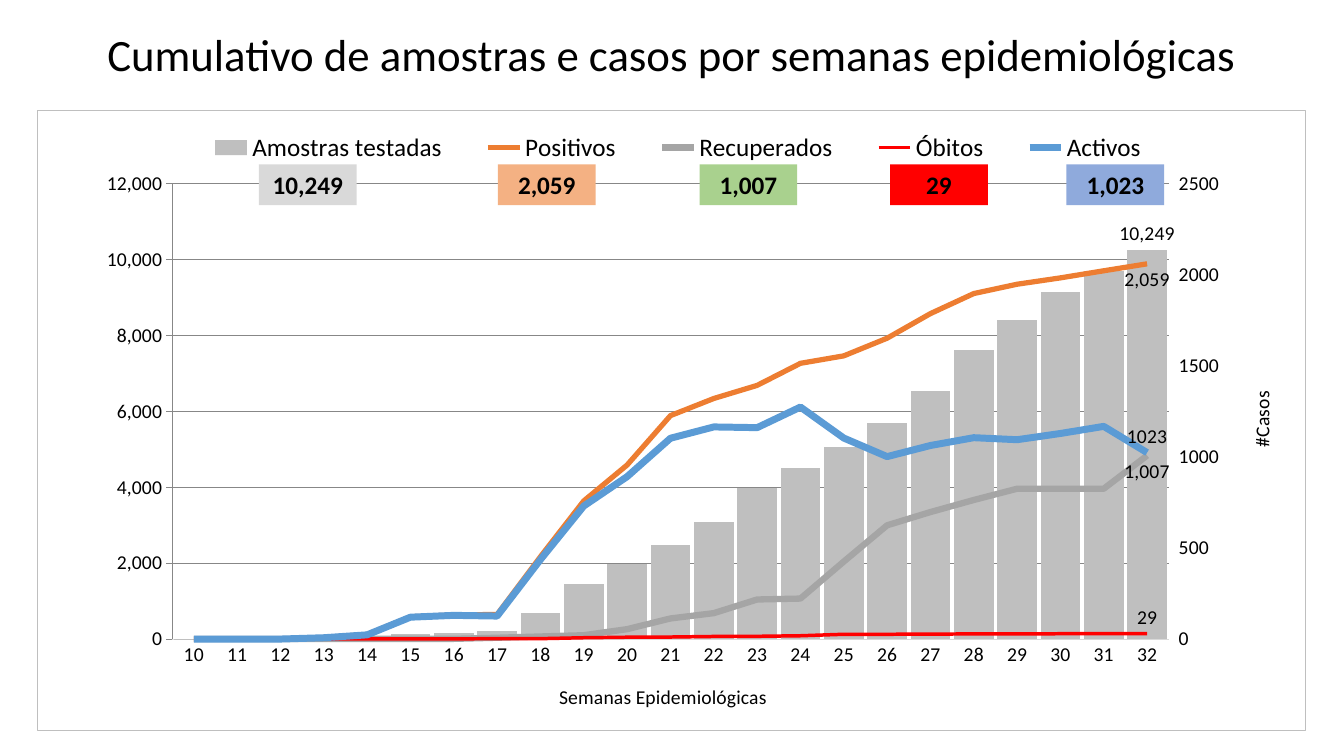
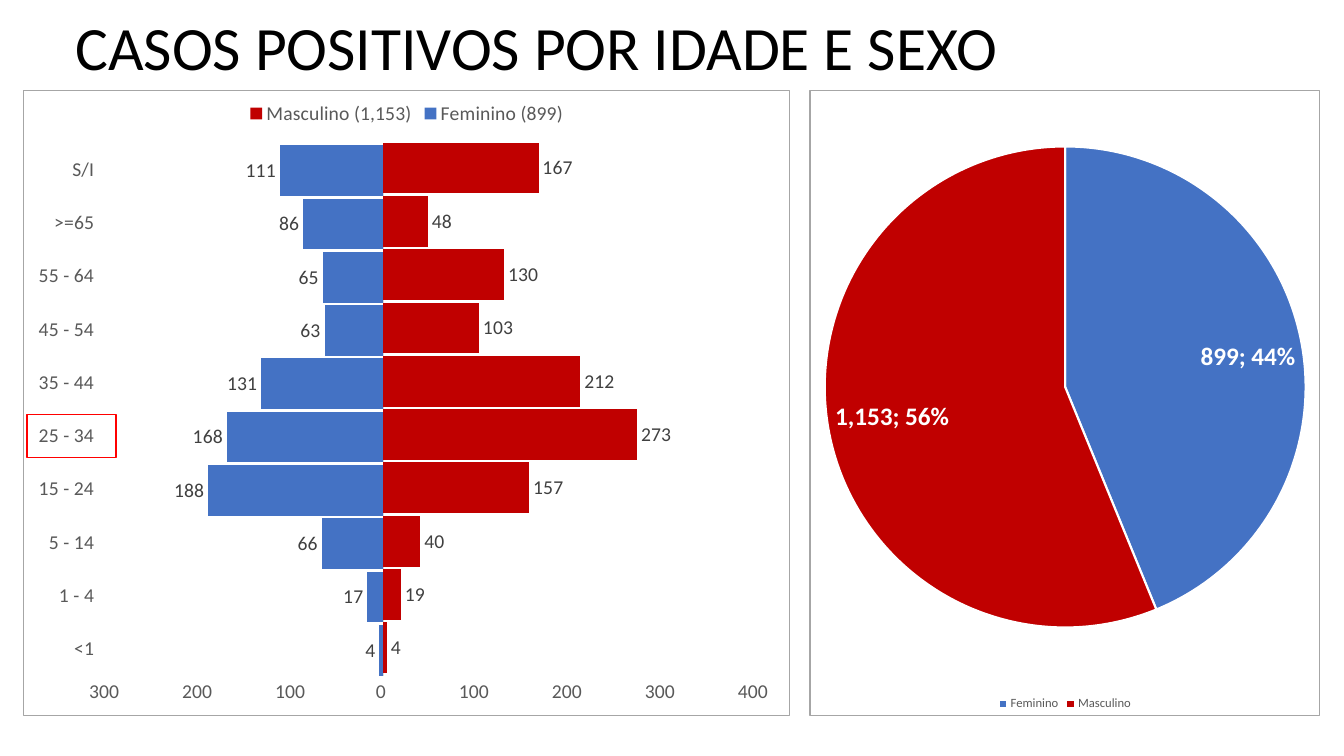
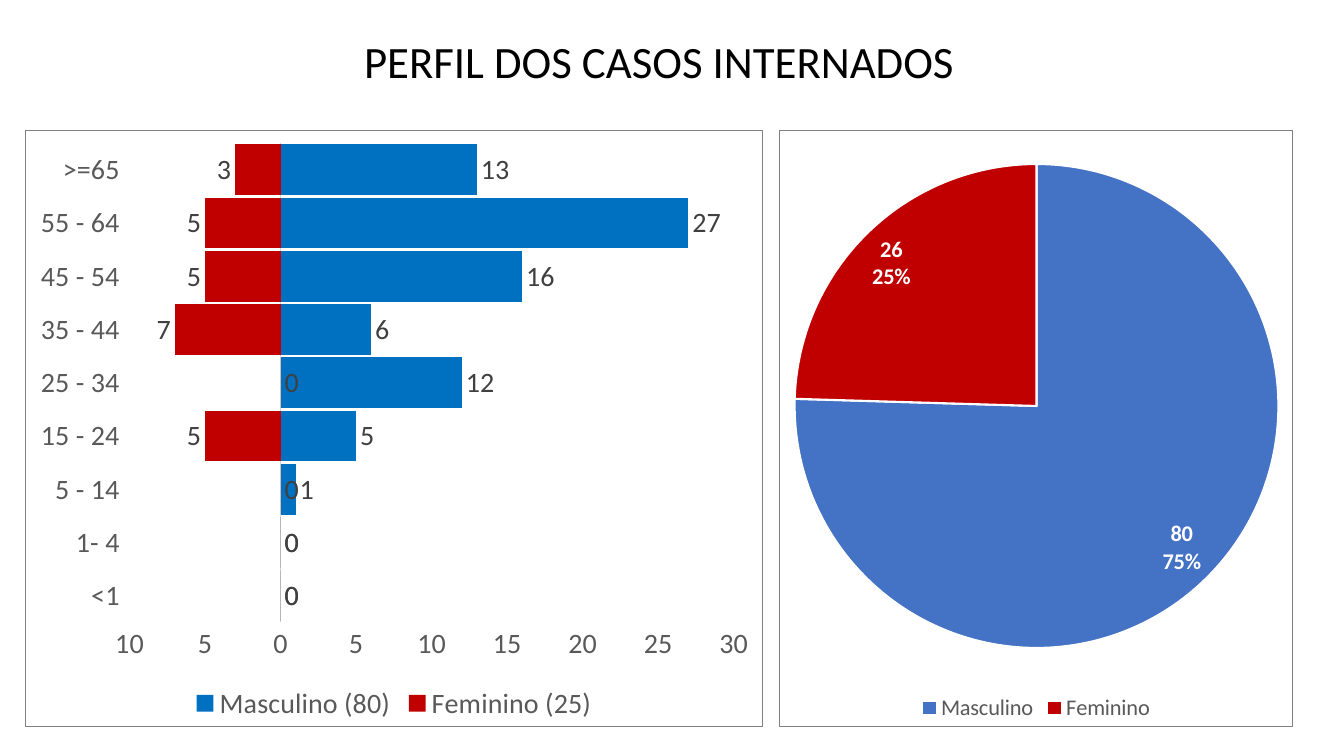
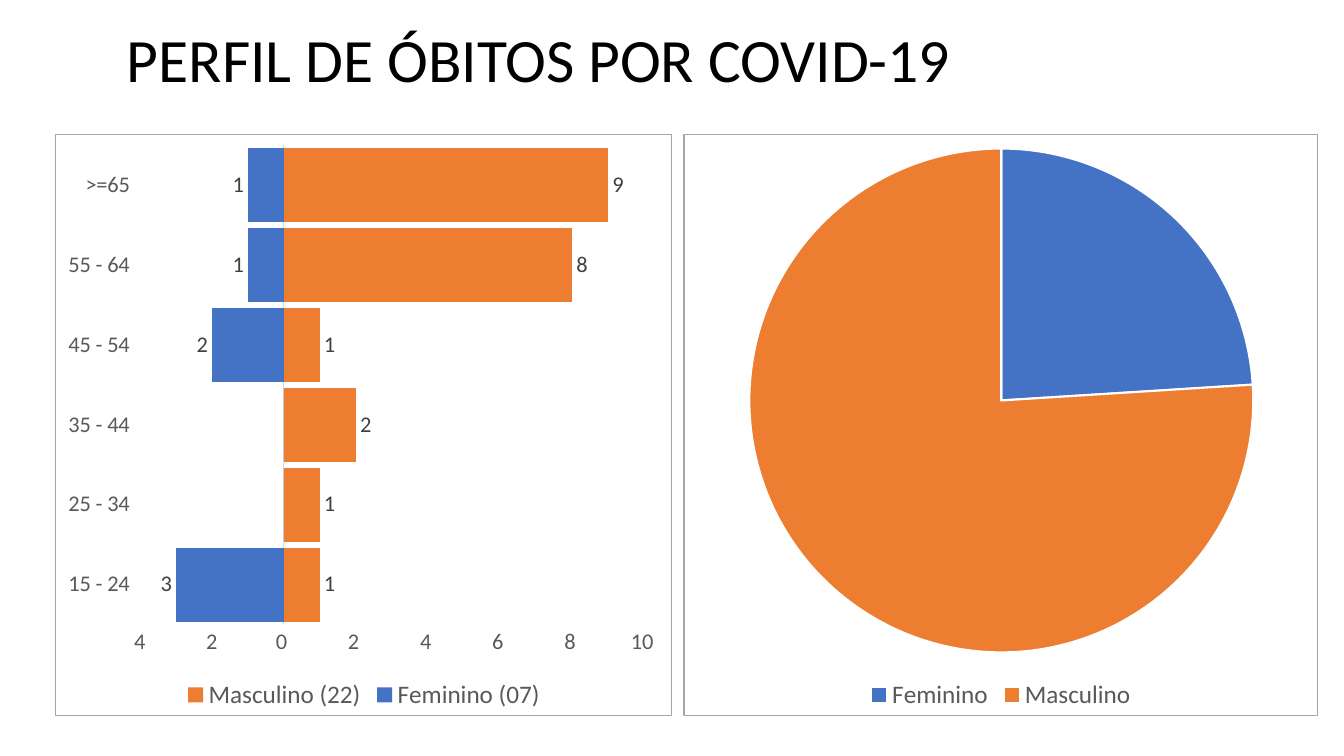
from copy import deepcopy

from pptx import Presentation
from pptx.chart.axis import ValueAxis
from pptx.chart.data import CategoryChartData
from pptx.dml.color import RGBColor
from pptx.enum.chart import (XL_CHART_TYPE, XL_LABEL_POSITION, XL_LEGEND_POSITION,
                             XL_MARKER_STYLE, XL_TICK_LABEL_POSITION, XL_TICK_MARK)
from pptx.enum.shapes import MSO_SHAPE
from pptx.enum.text import MSO_ANCHOR, PP_ALIGN
from pptx.oxml import parse_xml
from pptx.oxml.ns import nsdecls, qn
from pptx.util import Pt

FACE = "Calibri"
COLORS = {
    "black": "000000", "white": "FFFFFF", "text": "595959", "label": "404040",
    "axis": "D9D9D9", "silver": "BFBFBF", "frame": "A6A6A6", "dim": "808080",
    "gray": "A5A5A5", "orange": "ED7D31", "red": "FF0000", "sky": "5B9BD5",
    "blue": "4472C4", "azure": "0070C0", "crimson": "C00000",
    "peach": "F4B183", "green": "A9D18E", "pale": "8FAADC",
}
TOP, BOTTOM = XL_LEGEND_POSITION.TOP, XL_LEGEND_POSITION.BOTTOM
ABOVE, BELOW = XL_LABEL_POSITION.ABOVE, XL_LABEL_POSITION.BELOW
END = XL_LABEL_POSITION.OUTSIDE_END


def color(name):
    return RGBColor.from_string(COLORS[name])


def layout(spot, inner=False):
    """Manual chart layout; spot is left, top, width, height in percent."""
    parts = '<c:layoutTarget val="inner"/>' if inner else ""
    parts += '<c:xMode val="edge"/><c:yMode val="edge"/>'
    for tag, part in zip("xywh", spot):
        parts += f'<c:{tag} val="{part / 100:.3f}"/>'
    return parse_xml(f'<c:layout {nsdecls("c")}><c:manualLayout>{parts}'
                     '</c:manualLayout></c:layout>')


class Deck:
    def __init__(self):
        self.show = Presentation()
        self.show.slide_width, self.show.slide_height = Pt(960), Pt(540)
        self.page = None

    def slide(self, title, box, size, align=PP_ALIGN.LEFT):
        self.page = self.show.slides.add_slide(self.show.slide_layouts[6])
        frame = self.page.shapes.add_textbox(*map(Pt, box)).text_frame
        frame.word_wrap = True
        frame.vertical_anchor = MSO_ANCHOR.MIDDLE
        para = frame.paragraphs[0]
        para.text, para.alignment, para.line_spacing = title, align, 0.9
        self.font(para.font, size)

    def font(self, font, size, tint="black", bold=False):
        font.name, font.size, font.bold = FACE, Pt(size), bold
        font.color.rgb = color(tint)

    def rect(self, box, fill=None, line=None, text=""):
        shape = self.page.shapes.add_shape(MSO_SHAPE.RECTANGLE, *map(Pt, box))
        shape.shadow.inherit = False
        if fill:
            shape.fill.solid()
            shape.fill.fore_color.rgb = color(fill)
        else:
            shape.fill.background()
        if line:
            self.line(shape.line, line, 1)
        else:
            shape.line.fill.background()
        if text:
            para = shape.text_frame.paragraphs[0]
            para.text, para.alignment = text, PP_ALIGN.CENTER
            self.font(para.font, 18, bold=True)

    def line(self, line, tint, width):
        line.color.rgb = color(tint)
        line.width = Pt(width)

    def paint(self, part, tint):
        part.format.fill.solid()
        part.format.fill.fore_color.rgb = color(tint)

    def chart(self, kind, box, spot, cats, rows, size, legend, edge):
        """Framed chart; rows hold name, values, format; legend holds place, size, tint."""
        data = CategoryChartData()
        data.categories = cats
        for name, vals, form in rows:
            data.add_series(name, vals, form)
        chart = self.page.shapes.add_chart(kind, *map(Pt, box), data).chart
        chart.has_title = False
        self.font(chart.font, size)
        chart.has_legend = True
        chart.legend.include_in_layout = False
        chart.legend.position = legend[0]
        self.font(chart.legend.font, *legend[1:])
        root = chart._chartSpace
        area = root.chart.plotArea
        for old in area.findall(qn("c:layout")):
            area.remove(old)
        area.insert(0, layout(spot, inner=True))
        root.chart.addnext(parse_xml(
            f'<c:spPr {nsdecls("c", "a")}><a:noFill/><a:ln w="9525"><a:solidFill>'
            f'<a:srgbClr val="{COLORS[edge]}"/></a:solidFill></a:ln></c:spPr>'))
        return chart

    def axis(self, axis, size, tint, span=None, form=None, title=None, tick=XL_TICK_MARK.NONE):
        """Style an axis; a span (low, high, step) marks a value axis."""
        axis.has_major_gridlines = False
        axis.major_tick_mark, axis.minor_tick_mark = tick, XL_TICK_MARK.NONE
        self.font(axis.tick_labels.font, size, tint)
        if span:
            axis.minimum_scale, axis.maximum_scale, axis.major_unit = span
            axis.tick_labels.number_format = form
            axis.tick_labels.number_format_is_linked = False
            axis.format.line.fill.background()
        else:
            self.line(axis.format.line, "axis", 0.75)
        if title:
            axis.has_title = True
            para = axis.axis_title.text_frame.paragraphs[0]
            para.text = title
            self.font(para.font, size, tint)
            if span:
                body = next(axis.axis_title._element.iter(qn("a:bodyPr")))
                body.set("rot", "-5400000")
                body.set("vert", "horz")

    def bars(self, box, spot, cats, rows, size, legend, edge, span, form, gap, lap=100):
        """Age pyramid; rows hold name, values, tint, label format."""
        chart = self.chart(XL_CHART_TYPE.BAR_CLUSTERED, box, spot, cats,
                           [(name, vals, "General") for name, vals, _, _ in rows],
                           size, legend, edge)
        plot = chart.plots[0]
        plot.gap_width, plot.overlap, plot.vary_by_categories = gap, lap, False
        self.axis(chart.category_axis, size, "text")
        chart.category_axis.tick_label_position = XL_TICK_LABEL_POSITION.LOW
        self.axis(chart.value_axis, size, "text", span, form)
        for bar, (_, _, tint, mask) in zip(plot.series, rows):
            self.paint(bar, tint)
            bar.invert_if_negative = False
            tags = bar.data_labels
            tags.show_value, tags.position = True, END
            tags.number_format, tags.number_format_is_linked = mask, False
            self.font(tags.font, size, "label")

    def pie(self, box, spot, slices, legend, edge, size=None, gap=None):
        """Pie of (name, value, tint); size and gap are those of its labels."""
        cats, vals, tints = zip(*slices)
        chart = self.chart(XL_CHART_TYPE.PIE, box, spot, cats,
                           [("Series 1", vals, "#,##0")], 10, legend, edge)
        plot = chart.plots[0]
        plot.vary_by_categories = True
        ring = plot.series[0]
        for num, tint in enumerate(tints):
            point = ring.points[num]
            self.paint(point, tint)
            self.line(point.format.line, "white", 1.5)
        if size:
            tags = ring.data_labels
            tags.show_value = tags.show_percentage = True
            tags.position = XL_LABEL_POSITION.INSIDE_END
            self.font(tags.font, size, "white", True)
            mark = parse_xml(f'<c:separator {nsdecls("c")}>{gap}</c:separator>')
            last = tags._element.find(qn("c:showBubbleSize"))
            if last is None:
                last = tags._element.find(qn("c:showPercent"))
            last.addnext(mark)

    def combo(self, box, spot, key, cats, bar, lines):
        """Columns with lines on a second axis; lines add tint, width, label place."""
        chart = self.chart(XL_CHART_TYPE.COLUMN_CLUSTERED, box, spot, cats,
                           [bar] + [row[:3] for row in lines],
                           14, (TOP, 18, "black"), "silver")
        chart.legend._element.find(qn("c:legendPos")).addnext(layout(key))
        right = self.split(chart)
        plot = chart.plots[0]
        plot.gap_width, plot.vary_by_categories = 9, False
        self.axis(chart.category_axis, 14, "black", title="Semanas Epidemiológicas")
        self.axis(chart.value_axis, 14, "black", (0, 12000, 2000), "General",
                  "#Amostras testadas")
        self.axis(right, 14, "black", (0, 2500, 500), "General", "#Casos",
                  XL_TICK_MARK.OUTSIDE)
        self.paint(plot.series[0], "silver")
        self.tag(plot.series[0], len(cats) - 1, END)
        for curve, (_, _, _, tint, width, place) in zip(chart.plots[1].series, lines):
            self.line(curve.format.line, tint, width)
            curve.marker.style = XL_MARKER_STYLE.NONE
            curve.smooth = False
            self.tag(curve, len(cats) - 1, place)

    def split(self, chart):
        """Move all but the first series to lines; return their value axis."""
        area = chart._chartSpace.chart.plotArea
        cols = area.find(qn("c:barChart"))
        lines = parse_xml(f'<c:lineChart {nsdecls("c")}><c:grouping val="standard"/>'
                          '<c:varyColors val="0"/><c:marker val="1"/>'
                          '<c:axId val="50"/><c:axId val="51"/></c:lineChart>')
        for ser in cols.findall(qn("c:ser"))[1:]:
            for flag in ser.findall(qn("c:invertIfNegative")):
                ser.remove(flag)
            lines.find(qn("c:marker")).addprevious(ser)
        cols.addnext(lines)
        cat, val = area.find(qn("c:catAx")), area.find(qn("c:valAx"))
        base, side = deepcopy(cat), deepcopy(val)
        val.addnext(side)
        side.addnext(base)
        for axis, own, other in ((base, "50", "51"), (side, "51", "50")):
            axis.find(qn("c:axId")).set("val", own)
            axis.find(qn("c:crossAx")).set("val", other)
        base.find(qn("c:delete")).set("val", "1")
        side.find(qn("c:axPos")).set("val", "r")
        side.find(qn("c:crosses")).set("val", "max")
        return ValueAxis(side)

    def tag(self, series, num, place):
        """Label one point of a series with its value."""
        series.data_labels.show_value = False
        label = series.points[num].data_label
        self.font(label.font, 14)
        label.position = place


def weeks(deck):
    deck.slide("Cumulativo de amostras e casos por semanas epidemiológicas",
               (26.6, 10, 906.5, 61), 32, PP_ALIGN.CENTER)
    tests = [1, 27, 0, 54, 92, 123, 152, 201, 696, 1442, 1985, 2473, 3077, 3983, 4508,
             5051, 5689, 6535, 7601, 8400, 9147, 9689, 10249]
    found = [0, 0, 0, 8, 25, 122, 132, 135, 452, 758, 955, 1226, 1320, 1392, 1513,
             1554, 1651, 1786, 1896, 1947, 1982, 2021, 2059]
    cured = [0, 0, 0, 1, 1, 1, 1, 7, 14, 21, 54, 113, 142, 217, 222,
             425, 624, 697, 763, 825, 825, 825, 1007]
    dead = [None, 0, 0, 0, 1, 1, 1, 2, 2, 7, 10, 11, 14, 15, 18,
            26, 26, 27, 28, 28, 29, 29, 29]
    live = [0, 0, 0, 7, 23, 120, 130, 126, 436, 730, 891, 1102, 1164, 1160, 1273,
            1103, 1001, 1062, 1105, 1094, 1128, 1167, 1023]
    deck.combo((26.6, 78.5, 906.5, 443.5), (10.6, 11.8, 78.6, 73.5), (11, 3, 79, 6),
               [str(week) for week in range(10, 33)],
               ("Amostras testadas", tests, "#,##0"),
               [("Positivos", found, "#,##0", "orange", 3.75, BELOW),
                ("Recuperados", cured, "#,##0", "gray", 4.5, BELOW),
                ("Óbitos", dead, "#,##0", "red", 2.5, ABOVE),
                ("Activos", live, "General", "sky", 5, ABOVE)])
    for left, fill, text in ((185, "axis", "10,249"), (355.7, "peach", "2,059"),
                             (499.7, "green", "1,007"), (635.8, "red", "29"),
                             (761.8, "pale", "1,023")):
        deck.rect((left, 117.5, 69.8, 29), fill, text=text)


def cases(deck):
    deck.slide("CASOS POSITIVOS POR IDADE E SEXO", (46.8, 8.6, 896.4, 55.4), 44)
    deck.bars((16.6, 64.1, 547.9, 447.1), (10.5, 8.4, 85, 85.3),
              ["<1", "1 - 4", *AGES, "S/I"],
              [("Feminino (899)", [-4, -17, -66, -188, -168, -131, -63, -65, -86, -111],
                "blue", "0_);0"),
               ("Masculino (1,153)", [4, 19, 40, 157, 273, 212, 103, 130, 48, 167],
                "crimson", "#,##0")],
              14, (TOP, 14, "text"), "frame", (-300, 400, 100), "#,##0_);#,##0", 0, 95)
    deck.pie((578.2, 64.1, 365, 447.1), (2.9, 9, 94.3, 77),
             [("Feminino", 899, "blue"), ("Masculino", 1153, "crimson")],
             (BOTTOM, 9, "text"), "frame", 18, "; ")
    deck.rect((19.4, 296, 63.4, 31), line="red")


def wards(deck):
    deck.slide("PERFIL DOS CASOS INTERNADOS", (18, 20.9, 905.8, 49), 32, PP_ALIGN.CENTER)
    deck.bars((18, 92.9, 527, 426.2), (14.1, 2.1, 82, 80.5), ["<1", "1- 4", *AGES],
              [("Feminino (25)", [0, 0, 0, -5, 0, -7, -5, -5, -3], "crimson",
                "#,##0_);#,##0"),
               ("Masculino (80)", [0, 0, 1, 5, 12, 6, 16, 27, 13], "azure", "General")],
              20, (BOTTOM, 20, "text"), "dim", (-10, 30, 5), "#,##0;#,##0", 5)
    deck.pie((556.6, 92.9, 367.2, 426.2), (2.9, 5.6, 94.3, 81.3),
             [("Masculino", 80, "blue"), ("Feminino", 26, "crimson")],
             (BOTTOM, 16, "text"), "dim", 16, "\n")


def deaths(deck):
    deck.slide("PERFIL DE ÓBITOS POR COVID-19", (83.5, 10.8, 846.7, 67.7), 44)
    deck.bars((39.6, 95.8, 440.6, 415.4), (13.6, 1.8, 82, 82.6), AGES[1:],
              [("Feminino (07)", [-3, 0, 0, -2, -1, -1], "blue", "#,##0_);#,##0;"),
               ("Masculino (22)", [1, 1, 2, 1, 8, 9], "orange", "#,##0")],
              16, (BOTTOM, 18, "text"), "frame", (-4, 10, 2), "#,##0_);#,##0", 8)
    deck.pie((488.2, 95.8, 453.6, 415.4), (10.3, 2.4, 79.5, 86.8),
             [("Feminino", 24, "blue"), ("Masculino", 76, "orange")],
             (BOTTOM, 18, "text"), "frame")


AGES = ["5 - 14", "15 - 24", "25 - 34", "35 - 44", "45 - 54", "55 - 64", ">=65"]


def main():
    deck = Deck()
    for build in (weeks, cases, wards, deaths):
        build(deck)
    deck.show.save("out.pptx")


if __name__ == "__main__":
    main()
